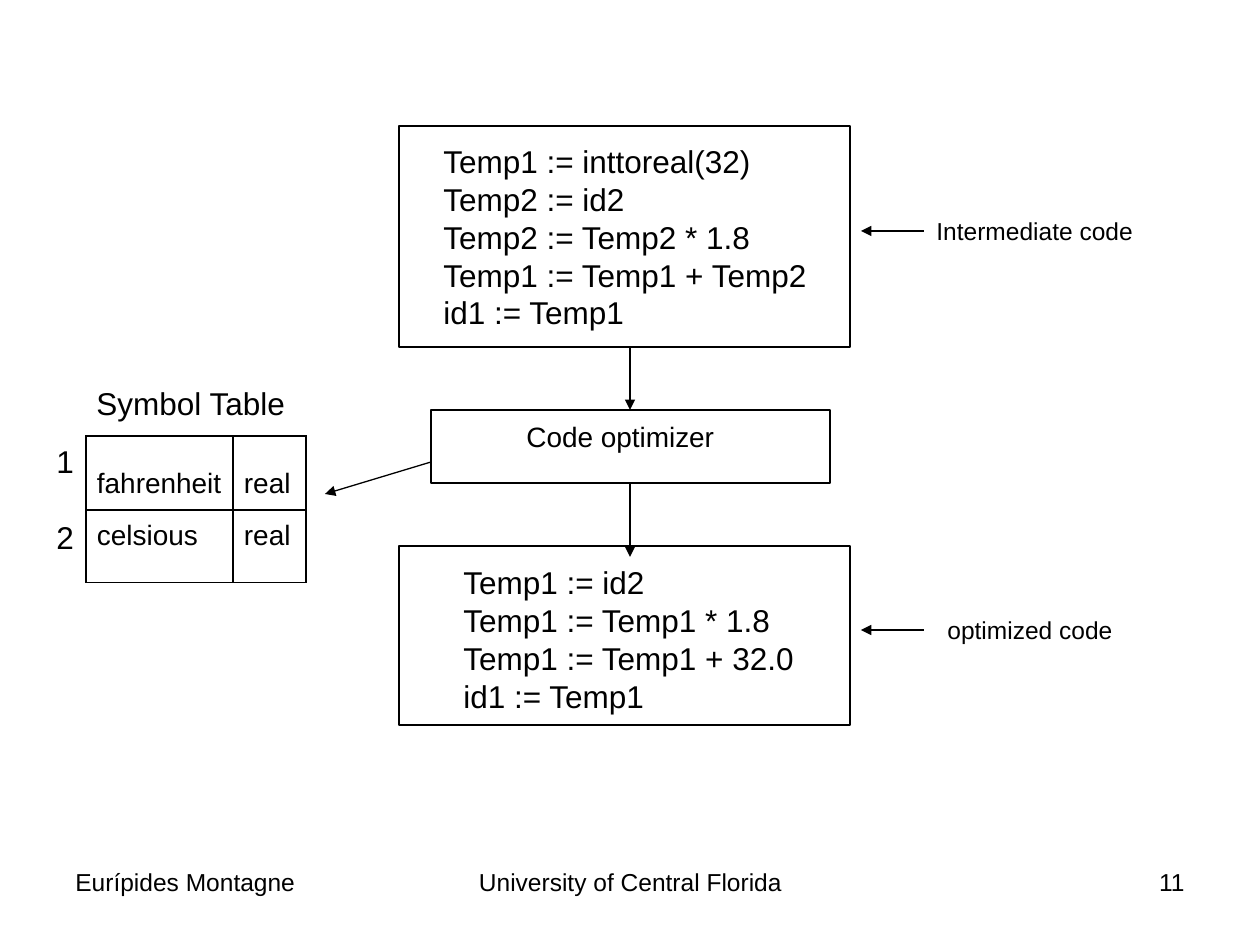
from pptx import Presentation
from pptx import util as u
from pptx.dml.color import RGBColor
from pptx.enum import shapes, text
from pptx.oxml import xmlchemy

COLORS = {"ink": "000000"}
SCALE = 914400 / 126
LEFT, CENTER, RIGHT = text.PP_ALIGN.LEFT, text.PP_ALIGN.CENTER, text.PP_ALIGN.RIGHT


def px(*lengths):
    return [u.Emu(round(length * SCALE)) for length in lengths]


class Diagram:
    font = "Arial"
    ink = RGBColor.from_string(COLORS["ink"])
    line_width = u.Pt(0.75)

    def __init__(self, page):
        self.page = page

    def add_span(self, para, words, size, align=LEFT):
        para.alignment = align
        span = para.add_run()
        span.text = words
        span.font.name = self.font
        span.font.size = u.Pt(size)
        span.font.color.rgb = self.ink

    def label(self, place, lines, size, align=LEFT, gap=0):
        frame = self.page.shapes.add_textbox(*px(*place)).text_frame
        frame.word_wrap = True
        for index, words in enumerate(lines):
            para = frame.add_paragraph() if index else frame.paragraphs[0]
            if index and gap:
                para.space_before = u.Pt(gap)
            self.add_span(para, words, size, align)

    def box(self, *place):
        box = self.page.shapes.add_shape(shapes.MSO_SHAPE.RECTANGLE, *px(*place))
        box.shadow.inherit = False
        box.fill.background()
        box.line.color.rgb = self.ink
        box.line.width = self.line_width

    def arrow(self, *ends):
        arrow = self.page.shapes.add_connector(shapes.MSO_CONNECTOR.STRAIGHT, *px(*ends))
        arrow.line.color.rgb = self.ink
        arrow.line.width = self.line_width
        head = xmlchemy.OxmlElement("a:tailEnd")
        head.set("type", "triangle")
        properties = arrow._element.spPr
        properties.get_or_add_ln().append(head)
        properties.append(xmlchemy.OxmlElement("a:effectLst"))

    def border(self, cell):
        properties = cell._tc.get_or_add_tcPr()
        for side in ("lnL", "lnR", "lnT", "lnB"):
            line = xmlchemy.OxmlElement(f"a:{side}")
            line.set("w", str(int(self.line_width)))
            fill = xmlchemy.OxmlElement("a:solidFill")
            color = xmlchemy.OxmlElement("a:srgbClr")
            color.set("val", COLORS["ink"])
            fill.append(color)
            line.append(fill)
            properties.append(line)

    def table(self, left, top, widths, heights, rows, anchors, size):
        place = px(left, top, sum(widths), sum(heights))
        table = self.page.shapes.add_table(len(rows), len(widths), *place).table
        table.first_row = table.horz_banding = False
        for column, width in zip(table.columns, px(*widths)):
            column.width = width
        for row, height, values, anchor in zip(table.rows, px(*heights), rows, anchors):
            row.height = height
            for cell, value in zip(row.cells, values):
                self.border(cell)
                cell.fill.background()
                cell.vertical_anchor = anchor
                cell.margin_left, cell.margin_right = px(11, 0)
                cell.margin_top, cell.margin_bottom = px(10, 11)
                self.add_span(cell.text_frame.paragraphs[0], value, size)


def main():
    deck = Presentation()
    deck.slide_width, deck.slide_height = px(1260, 945)
    diagram = Diagram(deck.slides.add_slide(deck.slide_layouts[6]))

    for left, width, words, align in (
        (63, 294, "Eurípides Montagne", LEFT),
        (431, 399, "University of Central Florida", CENTER),
        (903, 294, "11", RIGHT),
    ):
        diagram.label((left, 861, width, 66), [words], 14, align)

    diagram.label((84, 378, 218, 50), ["Symbol Table"], 18)
    diagram.table(
        86, 436, (147, 73), (74, 73),
        (("fahrenheit", "real"), ("celsious", "real")),
        (text.MSO_ANCHOR.BOTTOM, text.MSO_ANCHOR.TOP), 16,
    )
    diagram.label((44, 436, 43, 126), ["1", "2"], 18, gap=21.5)

    for place in ((399, 126, 451, 221), (431, 410, 399, 73), (399, 546, 451, 179)):
        diagram.box(*place)

    diagram.label((431, 136, 399, 202), [
        "Temp1 := inttoreal(32)",
        "Temp2 := id2",
        "Temp2 := Temp2 * 1.8",
        "Temp1 := Temp1 + Temp2",
        "id1 := Temp1",
    ], 18)
    diagram.label((514, 413, 231, 47), ["Code optimizer"], 16)
    diagram.label((451, 557, 363, 164), [
        "Temp1 := id2",
        "Temp1 := Temp1 * 1.8",
        "Temp1 := Temp1 + 32.0",
        "id1 := Temp1",
    ], 18)
    diagram.label((924, 210, 228, 42), ["Intermediate code"], 14)
    diagram.label((935, 609, 197, 42), ["optimized code"], 14)

    for ends in (
        (630, 347, 630, 410),
        (630, 483, 630, 557),
        (431, 462, 325, 494),
        (924, 231, 861, 231),
        (924, 630, 861, 630),
    ):
        diagram.arrow(*ends)

    deck.save("out.pptx")


if __name__ == "__main__":
    main()
